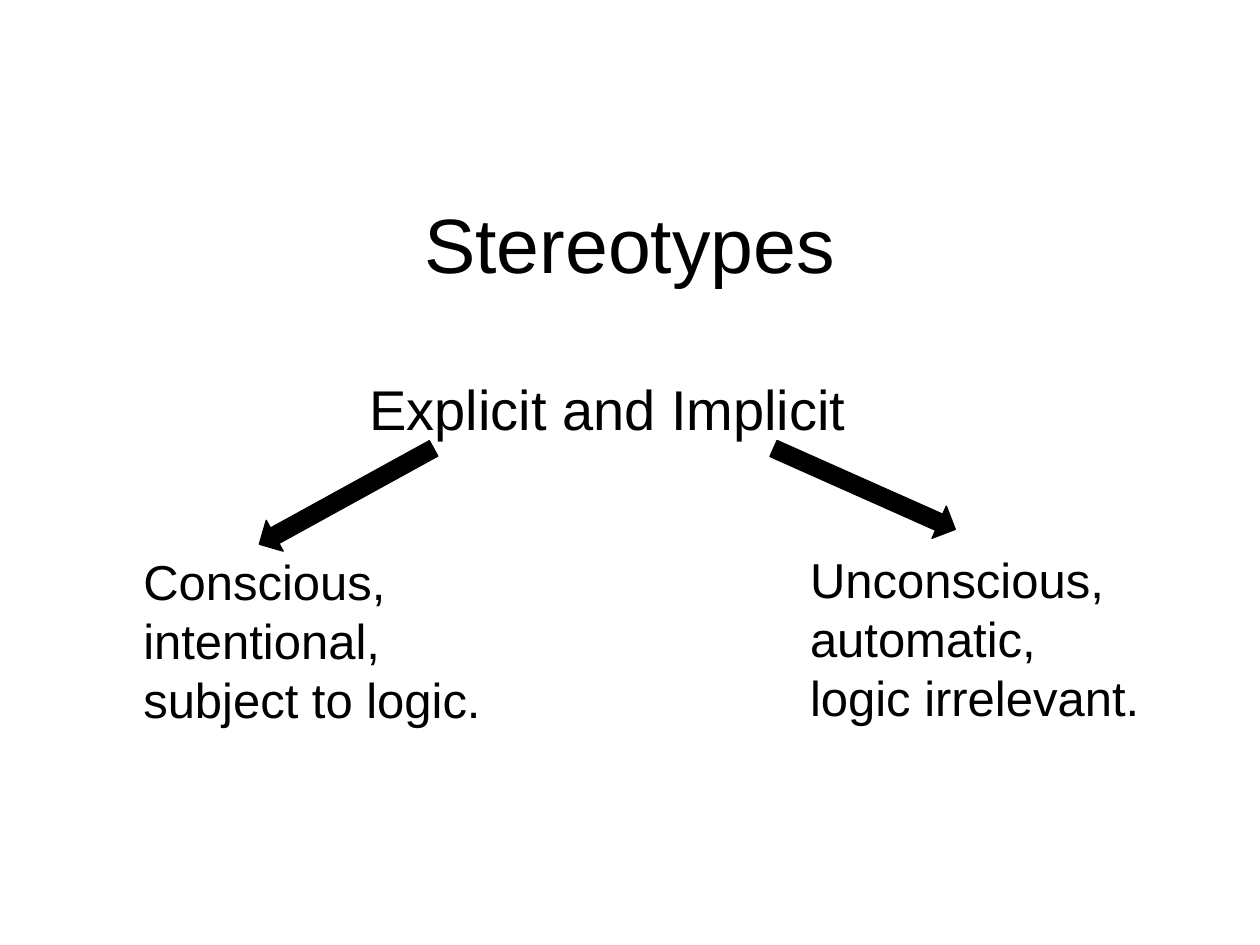
from pptx import Presentation
from pptx.dml.color import RGBColor
from pptx.enum.shapes import MSO_SHAPE
from pptx.enum.text import MSO_ANCHOR, MSO_AUTO_SIZE, PP_ALIGN
from pptx.util import Cm, Pt

COLORS = {"ink": "000000", "paper": "FFFFFF"}
INK = RGBColor.from_string(COLORS["ink"])

deck = Presentation()
deck.slide_width, deck.slide_height = Cm(25.4), Cm(19.05)
slide = deck.slides.add_slide(deck.slide_layouts[5])
slide.background.fill.solid()
slide.background.fill.fore_color.rgb = RGBColor.from_string(COLORS["paper"])


def write(paragraph, words, size):
    run = paragraph.add_run()
    run.text = words
    run.font.name = "Arial"
    run.font.size = Pt(size)
    run.font.color.rgb = INK


heading = slide.shapes.title
heading.left, heading.top = Cm(0), Cm(3.81)
heading.width, heading.height = Cm(25.4), Cm(3.18)
heading_text = heading.text_frame
heading_text.margin_left = heading_text.margin_right = heading_text.margin_bottom = 0
heading_text.margin_top = Cm(0.15)
heading_text.vertical_anchor = MSO_ANCHOR.TOP
heading_text.paragraphs[0].alignment = PP_ALIGN.CENTER
write(heading_text.paragraphs[0], "Stereotypes", 44)

statements = [
    (7.2, 7.42, 18.2, 1.62, 32, ["Explicit and Implicit"]),
    (2.64, 11, 8.69, 3.84, 28, ["Conscious,", "intentional,", "subject to logic."]),
    (16.08, 10.95, 8.69, 3.84, 28, ["Unconscious,", "automatic,", "logic irrelevant."]),
]
for left, top, width, height, size, lines in statements:
    statement = slide.shapes.add_textbox(Cm(left), Cm(top), Cm(width), Cm(height)).text_frame
    statement.word_wrap = True
    statement.auto_size = MSO_AUTO_SIZE.SHAPE_TO_FIT_TEXT
    for number, line in enumerate(lines):
        paragraph = statement.add_paragraph() if number else statement.paragraphs[0]
        write(paragraph, line, size)

for left, top, angle in [(4.98, 9.65, 331.2), (15.42, 9.5, 204)]:
    branch = slide.shapes.add_shape(MSO_SHAPE.LEFT_ARROW, Cm(left), Cm(top), Cm(4.01), Cm(0.71))
    branch.rotation = angle
    branch.shadow.inherit = False
    branch.fill.solid()
    branch.fill.fore_color.rgb = INK
    branch.line.color.rgb = INK
    branch.line.width = Pt(0.75)

deck.save("out.pptx")
